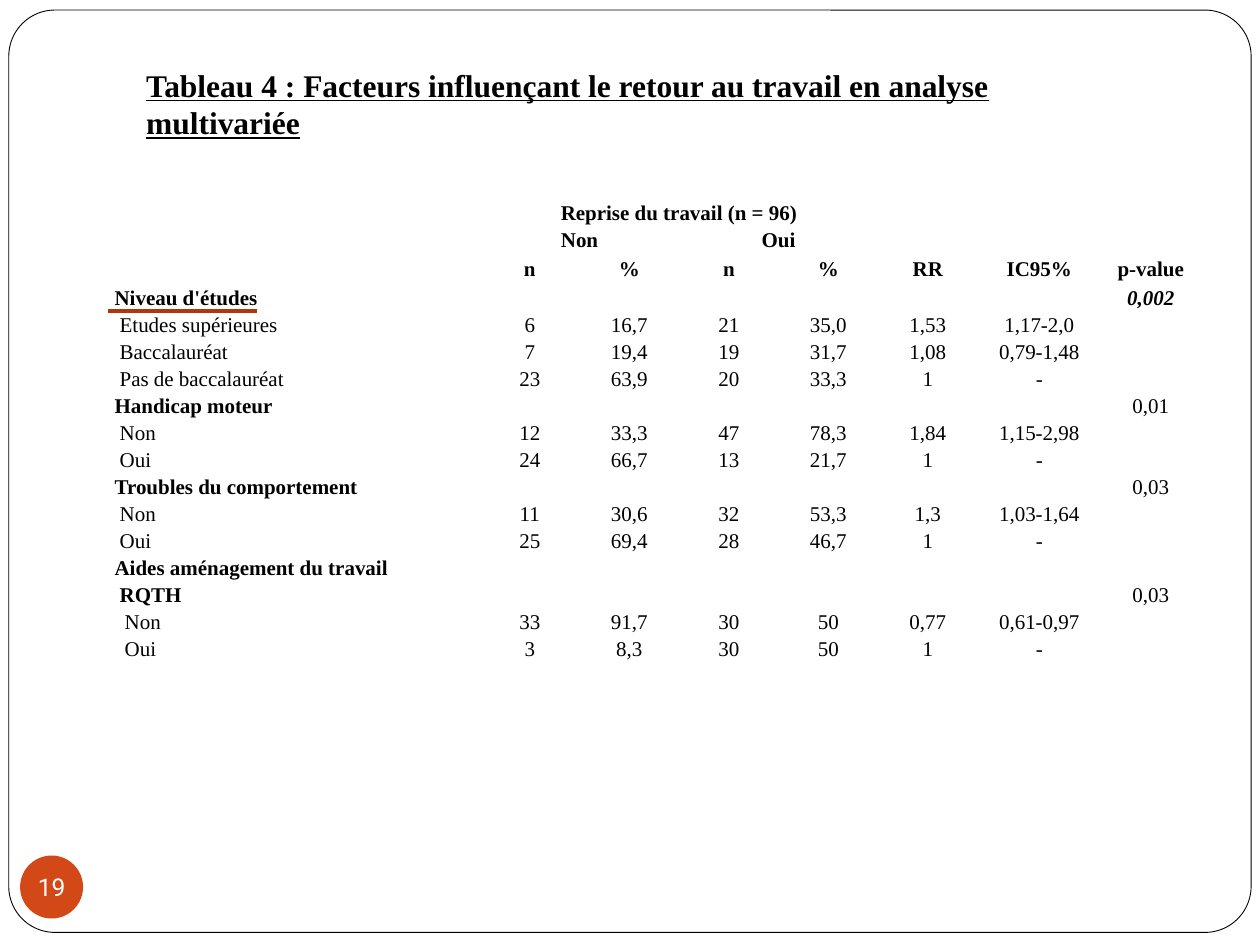
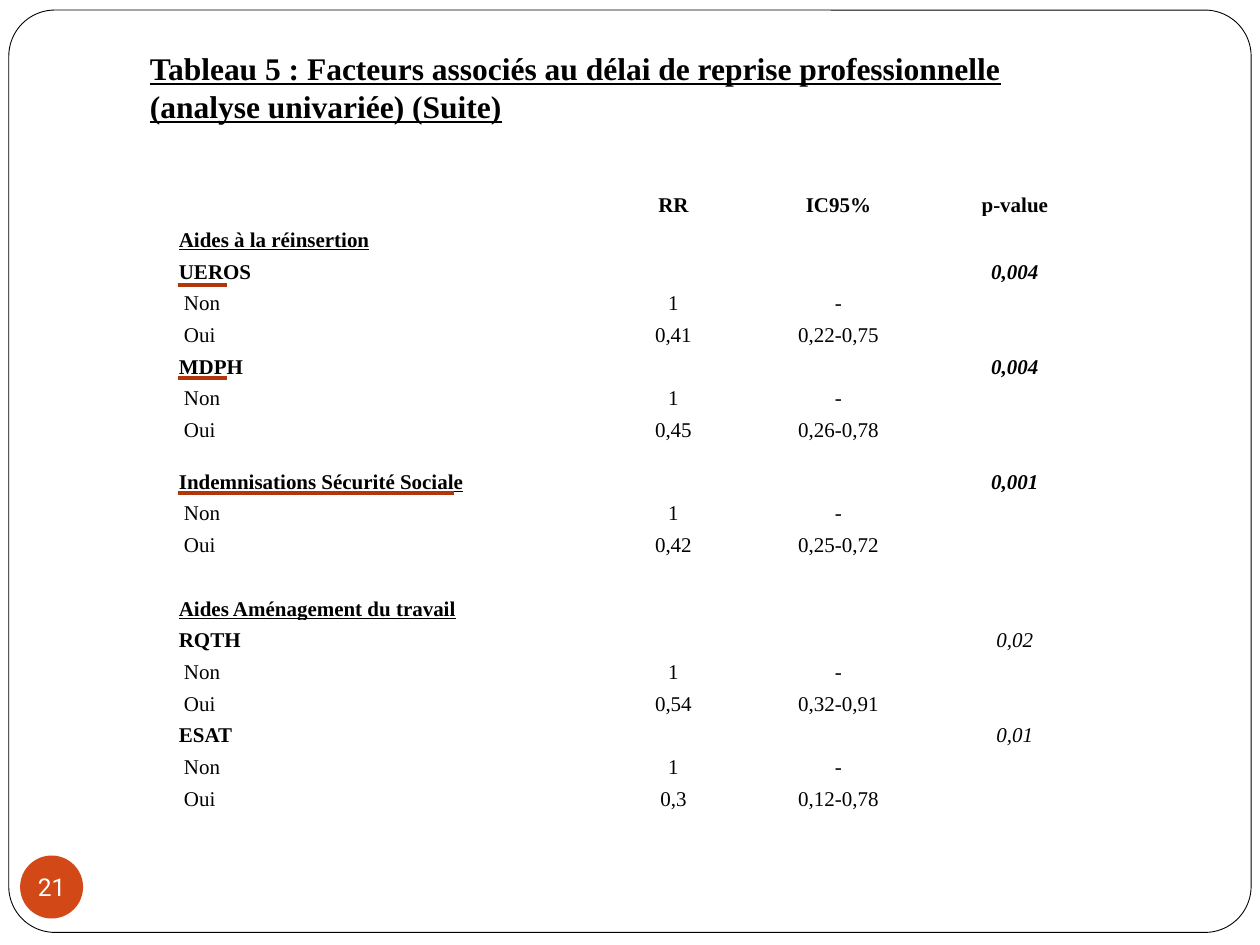
"""Build two slides of statistical tables on the return to work."""
import dataclasses
import typing

import lxml.etree
import pptx
import pptx.dml.color
import pptx.enum.shapes
import pptx.enum.text
import pptx.oxml.ns
import pptx.presentation
import pptx.slide
import pptx.table
import pptx.util
from pptx.util import Inches

BLACK = pptx.dml.color.RGBColor(0x00, 0x00, 0x00)
WHITE = pptx.dml.color.RGBColor(0xFF, 0xFF, 0xFF)
ORANGE = pptx.dml.color.RGBColor(0xD3, 0x48, 0x17)
RUST = pptx.dml.color.RGBColor(0xB1, 0x36, 0x0B)
SERIF = "Times New Roman"
SANS = "Roboto"
TABLE_SIZE = 12
TITLE_ONLY = 5
INDENT = 0.04

ALIGN = pptx.enum.text.PP_ALIGN
ANCHOR = pptx.enum.text.MSO_ANCHOR
SHAPE = pptx.enum.shapes.MSO_SHAPE


class Row(typing.NamedTuple):
    label: str = ""
    values: str = ""
    p_value: str = ""
    level: int = 0
    underline: bool = False
    p_bold: bool = False
    p_italic: bool = False


class Span(typing.NamedTuple):
    row: int
    first: int
    last: int


class Marker(typing.NamedTuple):
    left: float
    right: float
    top: float


@dataclasses.dataclass
class FactorTable:
    left: float
    top: float
    height: float
    widths: list[float]
    headers: list[tuple[str, ...]]
    rows: list[Row]
    fixed_heights: dict[int, float]
    side_margin: float
    header_anchor: pptx.enum.text.MSO_ANCHOR
    header_spacing: float
    body_spacing: float
    spans: tuple[Span, ...] = ()


@dataclasses.dataclass
class Page:
    number: int
    title: str
    title_box: tuple[float, float, float, float]
    table: FactorTable
    markers: list[Marker]


def reference(level: int = 1) -> Row:
    """Return the reference category shown as "Non" with a ratio of 1."""
    return Row("Non", "1 -", level=level)


MULTIVARIATE = FactorTable(
    left=0.86, top=1.58, height=3.67,
    widths=[2.95, 0.79, 0.79, 0.79, 0.79, 0.79, 0.98, 0.79],
    headers=[
        ("", "Reprise du travail (n = 96)", "", "", "", "", "", ""),
        ("", "Non", "", "Oui", "", "", "", ""),
        ("", "n", "%", "n", "%", "RR", "IC95%", "p-value"),
    ],
    rows=[
        Row("Niveau d'études", p_value="0,002", p_bold=True, p_italic=True),
        Row("Etudes supérieures", "6 16,7 21 35,0 1,53 1,17-2,0", level=1),
        Row("Baccalauréat", "7 19,4 19 31,7 1,08 0,79-1,48", level=1),
        Row("Pas de baccalauréat", "23 63,9 20 33,3 1 -", level=1),
        Row("Handicap moteur", p_value="0,01"),
        Row("Non", "12 33,3 47 78,3 1,84 1,15-2,98", level=1),
        Row("Oui", "24 66,7 13 21,7 1 -", level=1),
        Row("Troubles du comportement", p_value="0,03"),
        Row("Non", "11 30,6 32 53,3 1,3 1,03-1,64", level=1),
        Row("Oui", "25 69,4 28 46,7 1 -", level=1),
        Row("Aides aménagement du travail"),
        Row("RQTH", p_value="0,03", level=1),
        Row("Non", "33 91,7 30 50 0,77 0,61-0,97", level=2),
        Row("Oui", "3 8,3 30 50 1 -", level=2),
    ],
    fixed_heights={0: 0.21, 1: 0.23, 2: 0.23},
    side_margin=0.05, header_anchor=ANCHOR.MIDDLE,
    header_spacing=1.06, body_spacing=1.07,
    spans=(Span(0, 1, 4), Span(1, 1, 2), Span(1, 3, 4)),
)

UNIVARIATE = FactorTable(
    left=1.41, top=1.44, height=5,
    widths=[3.5, 0.87, 1.75, 1.05],
    headers=[("", "RR", "IC95%", "p-value")],
    rows=[
        Row("Aides à la réinsertion", underline=True),
        Row("UEROS", p_value="0,004", p_bold=True, p_italic=True),
        reference(),
        Row("Oui", "0,41 0,22-0,75", level=1),
        Row("MDPH", p_value="0,004", p_bold=True, p_italic=True),
        reference(),
        Row("Oui", "0,45 0,26-0,78", level=1),
        Row("Indemnisations Sécurité Sociale", p_value="0,001",
            underline=True, p_bold=True, p_italic=True),
        reference(),
        Row("Oui", "0,42 0,25-0,72", level=1),
        Row(),
        Row("Aides Aménagement du travail", underline=True),
        Row("RQTH", p_value="0,02", p_italic=True),
        reference(),
        Row("Oui", "0,54 0,32-0,91", level=1),
        Row("ESAT", p_value="0,01", p_italic=True),
        reference(),
        Row("Oui", "0,3 0,12-0,78", level=1),
    ],
    fixed_heights={0: 0.28, 1: 0.28, 8: 0.41},
    side_margin=0.01, header_anchor=ANCHOR.BOTTOM,
    header_spacing=1.06, body_spacing=1,
)

PAGES = [
    Page(
        19,
        "Tableau 4 : Facteurs influençant le retour au travail en analyse multivariée",
        (1.06, 0.47, 8.03, 0.71), MULTIVARIATE, [Marker(0.86, 2.04, 2.47)],
    ),
    Page(
        21,
        "Tableau 5 : Facteurs associés au délai de reprise professionnelle\n"
        "(analyse univariée) (Suite)",
        (1.09, 0.34, 8.11, 0.71), UNIVARIATE,
        [Marker(1.41, 1.8, 2.26), Marker(1.41, 1.8, 3), Marker(1.41, 3.6, 3.91)],
    ),
]


def style_runs(para, size: float, name: str, color: pptx.dml.color.RGBColor,
               bold: bool = False, italic: bool = False, underline: bool = False) -> None:
    """Format every run of a paragraph."""
    for run in para.runs:
        font = run.font
        font.size, font.name = pptx.util.Pt(size), name
        font.bold, font.italic, font.underline = bold, italic, underline
        font.color.rgb = color


def add_frame(slide: pptx.slide.Slide) -> None:
    """Give the slide's layout a rounded frame."""
    frame = slide.shapes.add_shape(
        SHAPE.ROUNDED_RECTANGLE, Inches(0.07), Inches(0.08), Inches(9.86), Inches(7.32))
    frame.adjustments[0] = 0.05
    frame.shadow.inherit = False
    frame.fill.solid()
    frame.fill.fore_color.rgb = WHITE
    frame.line.color.rgb = BLACK
    frame.line.width = pptx.util.Pt(0.5)
    slide.slide_layout.shapes._spTree.insert(2, frame._element)


def add_badge(slide: pptx.slide.Slide, number: int) -> None:
    """Draw the round page number."""
    badge = slide.shapes.add_shape(
        SHAPE.OVAL, Inches(0.16), Inches(6.79), Inches(0.5), Inches(0.5))
    badge.shadow.inherit = False
    badge.fill.solid()
    badge.fill.fore_color.rgb = ORANGE
    badge.line.fill.background()
    text_frame = badge.text_frame
    text_frame.margin_left = text_frame.margin_right = 0
    text_frame.margin_top = text_frame.margin_bottom = 0
    text_frame.word_wrap = False
    text_frame.vertical_anchor = ANCHOR.MIDDLE
    text_frame.text = str(number)
    text_frame.paragraphs[0].alignment = ALIGN.CENTER
    style_runs(text_frame.paragraphs[0], 14, SANS, WHITE)


def set_title(slide: pptx.slide.Slide, page: Page) -> None:
    """Place and format the title placeholder."""
    title = slide.shapes.title
    title.left, title.top, title.width, title.height = map(Inches, page.title_box)
    text_frame = title.text_frame
    text_frame.text = page.title
    text_frame.word_wrap = True
    text_frame.auto_size = pptx.enum.text.MSO_AUTO_SIZE.NONE
    text_frame.vertical_anchor = ANCHOR.TOP
    for para in text_frame.paragraphs:
        para.alignment = ALIGN.LEFT
        style_runs(para, 18, SERIF, BLACK, bold=True, underline=True)


def fill_cell(cell: pptx.table._Cell, text: str, spacing: float, anchor: ANCHOR,
              centred: bool, margin: float, level: int = 0, **emphasis: bool) -> None:
    """Write one table cell, keeping empty cells as low as filled ones."""
    cell.fill.background()
    cell.margin_left, cell.margin_right = Inches(margin + level * INDENT), Inches(margin)
    cell.margin_top = cell.margin_bottom = 0
    cell.vertical_anchor = anchor
    cell.text_frame.text = text
    para = cell.text_frame.paragraphs[0]
    para.alignment = ALIGN.CENTER if centred else ALIGN.LEFT
    para.line_spacing = spacing
    style_runs(para, TABLE_SIZE, SERIF, BLACK, **emphasis)
    if not text:
        end = lxml.etree.SubElement(para._p, pptx.oxml.ns.qn("a:endParaRPr"))
        end.set("sz", str(TABLE_SIZE * 100))


def add_factor_table(slide: pptx.slide.Slide, spec: FactorTable) -> None:
    """Draw a table of factors with its header rows."""
    header_count, column_count = len(spec.headers), len(spec.widths)
    row_count = header_count + len(spec.rows)
    table = slide.shapes.add_table(
        row_count, column_count, Inches(spec.left), Inches(spec.top),
        Inches(sum(spec.widths)), Inches(spec.height)).table
    table.first_row = table.horz_banding = False
    for column, width in zip(table.columns, spec.widths):
        column.width = Inches(width)
    free_height = spec.height - sum(spec.fixed_heights.values())
    row_height = free_height / (row_count - len(spec.fixed_heights))
    for index, row in enumerate(table.rows):
        row.height = Inches(spec.fixed_heights.get(index, row_height))

    for row_index, header in enumerate(spec.headers):
        for column_index, text in enumerate(header):
            fill_cell(table.cell(row_index, column_index), text, spec.header_spacing,
                      spec.header_anchor, True, spec.side_margin, bold=True)
    for span in spec.spans:
        table.cell(span.row, span.first).merge(table.cell(span.row, span.last))

    for row_index, row in enumerate(spec.rows, header_count):
        values = row.values.split() or [""] * (column_count - 2)
        common = (spec.body_spacing, ANCHOR.BOTTOM)
        fill_cell(table.cell(row_index, 0), row.label, *common, False, spec.side_margin,
                  row.level, bold=not row.values, underline=row.underline)
        for column_index, value in enumerate(values, 1):
            fill_cell(table.cell(row_index, column_index), value, *common, True,
                      spec.side_margin)
        fill_cell(table.cell(row_index, column_count - 1), row.p_value, *common, True,
                  spec.side_margin, bold=row.p_bold, italic=row.p_italic)


def add_marker(slide: pptx.slide.Slide, marker: Marker) -> None:
    """Underline a significant factor with a coloured line."""
    line = slide.shapes.add_connector(
        pptx.enum.shapes.MSO_CONNECTOR.STRAIGHT, Inches(marker.left), Inches(marker.top),
        Inches(marker.right), Inches(marker.top))
    line.line.color.rgb = RUST
    line.line.width = pptx.util.Pt(2.25)
    lxml.etree.SubElement(line._element.spPr, pptx.oxml.ns.qn("a:effectLst"))


def add_page(deck: pptx.presentation.Presentation, page: Page) -> pptx.slide.Slide:
    """Add one complete slide to the deck."""
    slide = deck.slides.add_slide(deck.slide_layouts[TITLE_ONLY])
    add_badge(slide, page.number)
    set_title(slide, page)
    add_factor_table(slide, page.table)
    for marker in page.markers:
        add_marker(slide, marker)
    return slide


def main() -> None:
    """Build and save the deck."""
    deck = pptx.Presentation()
    deck.slide_width, deck.slide_height = Inches(10), Inches(7.5)
    slides = [add_page(deck, page) for page in PAGES]
    add_frame(slides[0])
    deck.save("out.pptx")


if __name__ == "__main__":
    main()
